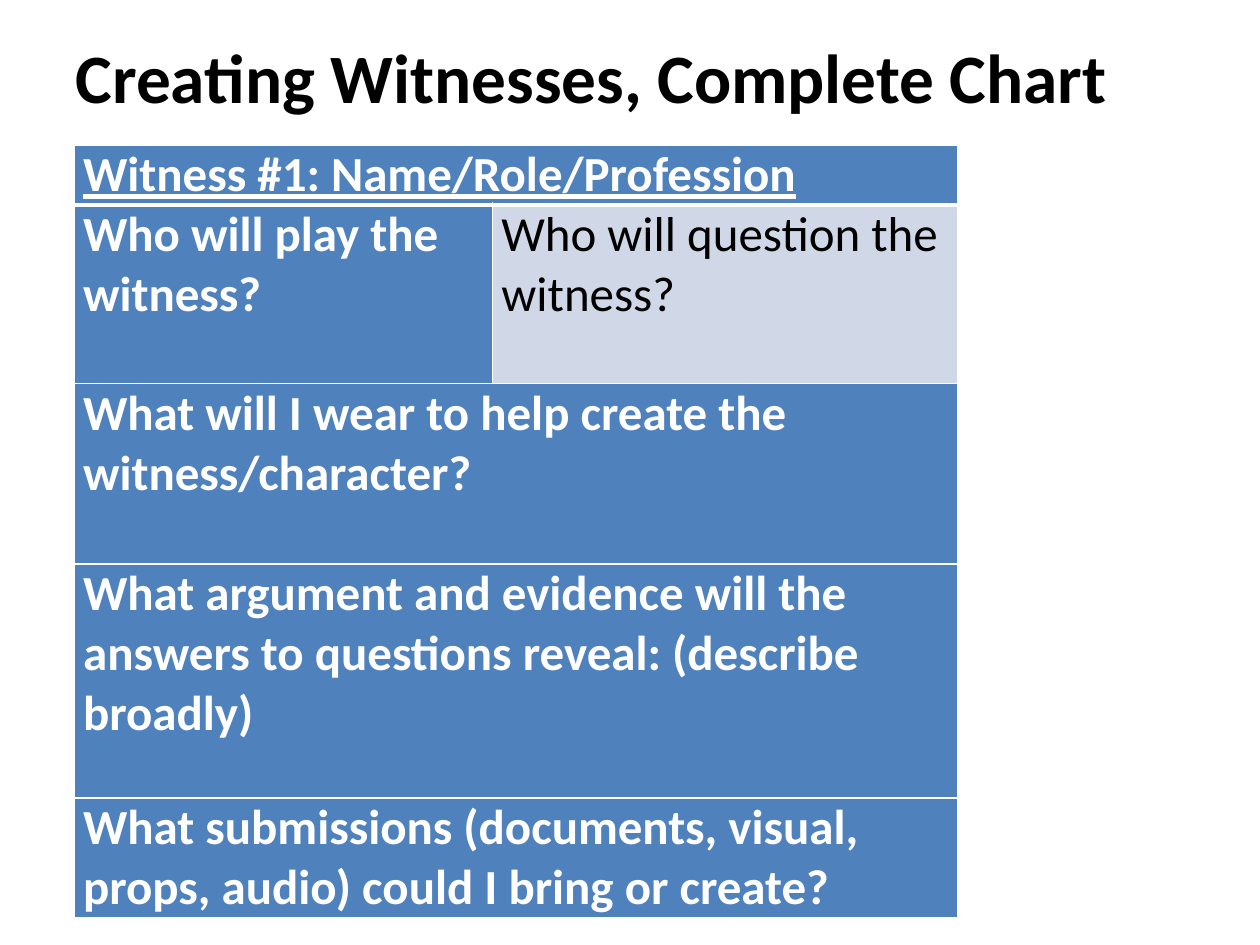
from lxml import etree
from pptx import Presentation
from pptx.dml.color import RGBColor
from pptx.enum.text import MSO_ANCHOR, PP_ALIGN
from pptx.oxml.ns import qn
from pptx.util import Inches, Pt

LEFT = PP_ALIGN.LEFT
MIDDLE = MSO_ANCHOR.MIDDLE
FONT = "Calibri"
COLORS = {"text": "000000", "white": "FFFFFF", "blue": "4F81BD", "pale": "D0D8E8"}

COL_WIDTHS = [3.32, 3.69]
ROW_HEIGHTS = [0.47, 1.42, 1.43, 1.86, 0.95]
# One list per row; a single entry spans both columns
QUESTIONS = [
    ["Witness #1: Name/Role/Profession"],
    ["Who will play the witness?", "Who will question the witness?"],
    ["What will I wear to help create the witness/character?"],
    ["What argument and evidence will the answers to questions reveal: "
     "(describe broadly)"],
    ["What submissions (documents, visual, props, audio) could I bring or create?"],
]


def rgb(name):
    return RGBColor.from_string(COLORS[name])


def set_font(p, size, color, bold):
    p.font.name = FONT
    p.font.size = Pt(size)
    p.font.bold = bold
    p.font.color.rgb = rgb(color)


def set_borders(cell, widths):
    """Draw white cell borders; widths maps a side (L, R, T, B) to points."""
    tc_pr = cell._tc.get_or_add_tcPr()
    for i, side in enumerate("LRTB"):
        ln = etree.Element(qn(f"a:ln{side}"), w=str(Pt(widths[side])))
        fill = etree.SubElement(ln, qn("a:solidFill"))
        etree.SubElement(fill, qn("a:srgbClr"), val=COLORS["white"])
        tc_pr.insert(i, ln)


def add_title(slide, left, top, width, height):
    sp = slide.shapes.title
    sp.left, sp.top, sp.width, sp.height = left, top, width, height
    tf = sp.text_frame
    tf.text = "Creating Witnesses, Complete Chart"
    tf.vertical_anchor = MIDDLE
    p = tf.paragraphs[0]
    p.alignment = LEFT
    set_font(p, 39.6, "text", True)


def add_witness_table(slide, left, top, width, height):
    table = slide.shapes.add_table(
        len(ROW_HEIGHTS), len(COL_WIDTHS), left, top, width, height).table
    for column, w in zip(table.columns, COL_WIDTHS):
        column.width = Inches(w)
    for row, h in zip(table.rows, ROW_HEIGHTS):
        row.height = Inches(h)

    for r, texts in enumerate(QUESTIONS):
        if len(texts) == 1:
            table.cell(r, 0).merge(table.cell(r, 1))
        for c in range(len(COL_WIDTHS)):
            cell = table.cell(r, c)
            answer = c < len(texts) and c == 1
            cell.fill.solid()
            cell.fill.fore_color.rgb = rgb("pale" if answer else "blue")
            set_borders(cell, {"L": 1, "R": 1, "T": 3 if r == 1 else 1,
                               "B": 3 if r == 0 else 1})
            cell.margin_left = cell.margin_right = Inches(0.07)
            cell.margin_top = cell.margin_bottom = 0
            if c < len(texts):
                cell.text = texts[c]
                p = cell.text_frame.paragraphs[0]
                set_font(p, 28, "text" if answer else "white", not answer)
                p.font.underline = r == 0


def main():
    prs = Presentation()
    prs.slide_width, prs.slide_height = Inches(10), Inches(7.5)
    slide = prs.slides.add_slide(prs.slide_layouts[5])
    add_title(slide, Inches(0.5), Inches(0.3), Inches(9), Inches(0.61))
    add_witness_table(slide, Inches(0.59), Inches(1.15),
                      Inches(sum(COL_WIDTHS)), Inches(sum(ROW_HEIGHTS)))
    prs.save("out.pptx")


if __name__ == "__main__":
    main()
